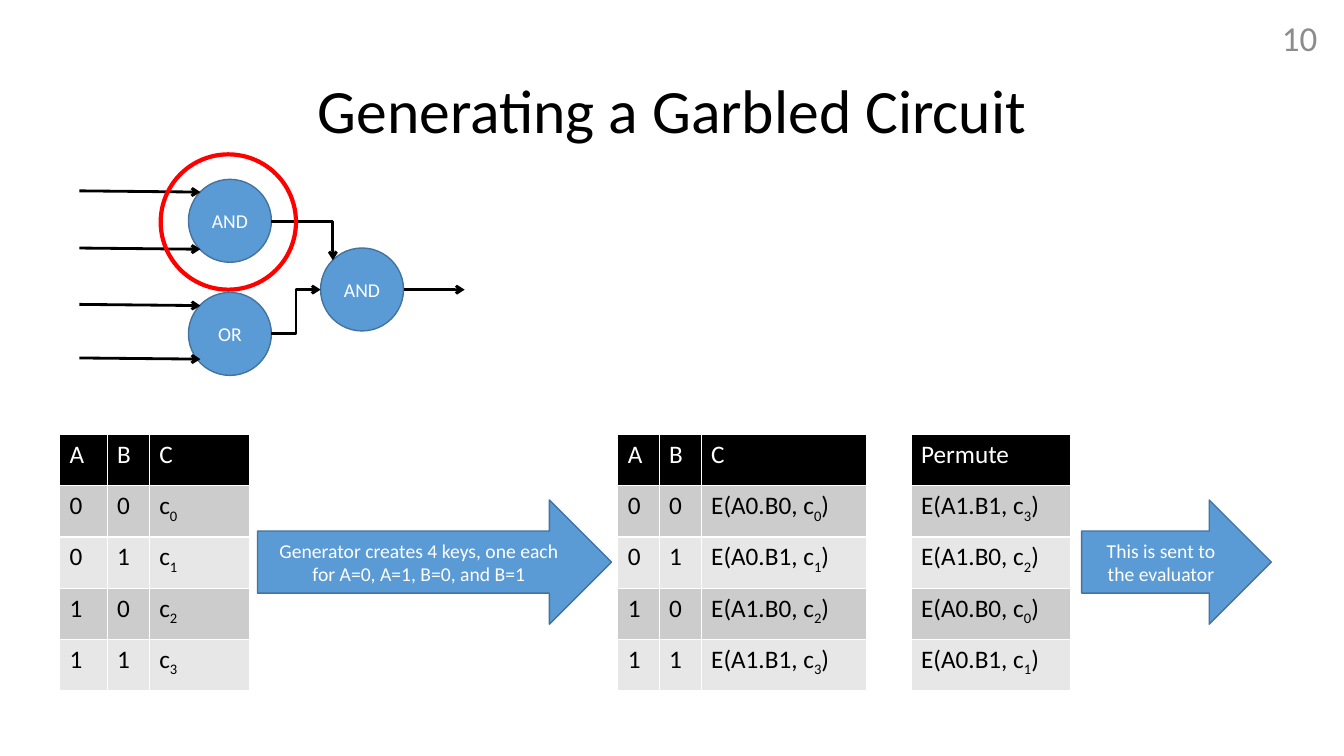
import pptx
import pptx.util
import pptx.dml.color
import pptx.enum.shapes
import pptx.enum.text
import pptx.oxml.ns
import lxml.etree

Cm, Pt = pptx.util.Cm, pptx.util.Pt
SHAPE = pptx.enum.shapes.MSO_SHAPE
LINK = pptx.enum.shapes.MSO_CONNECTOR
ALIGN = pptx.enum.text.PP_ALIGN
MIDDLE = pptx.enum.text.MSO_ANCHOR.MIDDLE
qn = pptx.oxml.ns.qn

COLOURS = {name: pptx.dml.color.RGBColor.from_string(value) for name, value in {
    "black": "000000", "white": "FFFFFF", "grey": "8C8C8C", "blue": "5B9BD5",
    "edge": "43739E", "red": "FF0000", "dark band": "CCCCCC", "light band": "E7E7E7",
}.items()}


def style(para, size, colour, align=None):
    para.font.name = "Calibri"
    para.font.size = Pt(size)
    para.font.bold = False
    para.font.color.rgb = COLOURS[colour]
    para.alignment = align


def add_blue_shape(kind, left, top, width, height, text):
    shape = page.shapes.add_shape(kind, Cm(left), Cm(top), Cm(width), Cm(height))
    shape.shadow.inherit = False
    shape.fill.solid()
    shape.fill.fore_color.rgb = COLOURS["blue"]
    shape.line.color.rgb = COLOURS["edge"]
    shape.line.width = Pt(1)
    shape.text_frame.word_wrap = True
    shape.text_frame.vertical_anchor = MIDDLE
    shape.text_frame.text = text
    style(shape.text_frame.paragraphs[0], 14, "white", ALIGN.CENTER)


deck = pptx.Presentation()
deck.slide_width, deck.slide_height = Cm(33.87), Cm(19.05)
page = deck.slides.add_slide(deck.slide_layouts[5])

# Title
title = page.shapes.title
title.left, title.top, title.width, title.height = Cm(2.34), Cm(1.02), Cm(29.21), Cm(3.68)
title.text_frame.text = "Generating a Garbled Circuit"
title.text_frame.vertical_anchor = MIDDLE
style(title.text_frame.paragraphs[0], 44, "black", ALIGN.CENTER)
title.text_frame.paragraphs[0].line_spacing = 0.9

# Page number
box = page.shapes.add_textbox(Cm(25.83), Cm(0.43), Cm(7.62), Cm(1.01))
box.text_frame.word_wrap = True
box.text_frame.vertical_anchor = MIDDLE
box.text_frame.text = "10"
style(box.text_frame.paragraphs[0], 25, "grey", ALIGN.RIGHT)

# Gates
GATE = 2.09
for left, top, label in [(4.75, 4.52, "AND"), (4.75, 7.37, "OR"), (8.08, 6.25, "AND")]:
    add_blue_shape(SHAPE.OVAL, left, top, GATE, GATE, label)

# Wires: four inputs, two between gates, one output
wires = [("line", 2, y, 5.05, y + 0.03) for y in (4.81, 6.25, 7.67, 9.02)]
wires += [
    ("bentConnector2", 6.84, 5.58, 8.39, 6.56),
    ("bentConnector3", 6.84, 8.41, 8.08, 7.3),
    ("line", 10.17, 7.3, 11.71, 7.3),
]
for geometry, *ends in wires:
    kind = LINK.STRAIGHT if geometry == "line" else LINK.ELBOW
    wire = page.shapes.add_connector(kind, *map(Cm, ends))
    wire.line.color.rgb = COLOURS["black"]
    wire.line.width = Pt(2)
    properties = wire._element.spPr
    properties.find(qn("a:prstGeom")).set("prst", geometry)
    lxml.etree.SubElement(wire.line._get_or_add_ln(), qn("a:tailEnd"), type="arrow")
    lxml.etree.SubElement(properties, qn("a:effectLst"))

# Ring around the first gate
ring = page.shapes.add_shape(SHAPE.OVAL, Cm(4.05), Cm(3.89), Cm(3.41), Cm(3.41))
ring.shadow.inherit = False
ring.fill.background()
ring.line.color.rgb = COLOURS["red"]
ring.line.width = Pt(3)

# Tables: an underscore puts the next character in subscript
ROW = 1.29
inputs = [("0", "0"), ("0", "1"), ("1", "0"), ("1", "1")]
keys = [f"E(A{a}.B{b}, c_{index})" for index, (a, b) in enumerate(inputs)]
tables = [
    (1.5, [1.2, 1.06, 2.54],
     [("A", "B", "C")] + [(a, b, f"c_{index}") for index, (a, b) in enumerate(inputs)]),
    (15.57, [1.04, 1.06, 4.18],
     [("A", "B", "C")] + [(*pair, key) for pair, key in zip(inputs, keys)]),
    (22.96, [4.02], [("Permute",)] + [(keys[index],) for index in (3, 2, 0, 1)]),
]
for left, widths, rows in tables:
    table = page.shapes.add_table(len(rows), len(widths), Cm(left), Cm(10.95),
                                  Cm(sum(widths)), Cm(ROW * len(rows))).table
    for column, width in zip(table.columns, widths):
        column.width = Cm(width)
    for row_index, row in enumerate(rows):
        band = "black" if row_index == 0 else "dark band" if row_index % 2 else "light band"
        for column_index, text in enumerate(row):
            cell = table.cell(row_index, column_index)
            cell.fill.solid()
            cell.fill.fore_color.rgb = COLOURS[band]
            para = cell.text_frame.paragraphs[0]
            style(para, 18, "white" if row_index == 0 else "black")
            base, _, rest = text.partition("_")
            for part, offset in [(base, 0), (rest[:1], -25000), (rest[1:], 0)]:
                if part:
                    span = para.add_run()
                    span.text = part
                    if offset:
                        span.font._element.set("baseline", str(offset))

# Step arrows
for left, width, text in [
    (6.49, 8.92, "Generator creates 4 keys, one each for A=0, A=1, B=0, and B=1"),
    (27.26, 4.78, "This is sent to the evaluator"),
]:
    add_blue_shape(SHAPE.RIGHT_ARROW, left, 12.6, width, 3.13, text)

deck.save("out.pptx")
